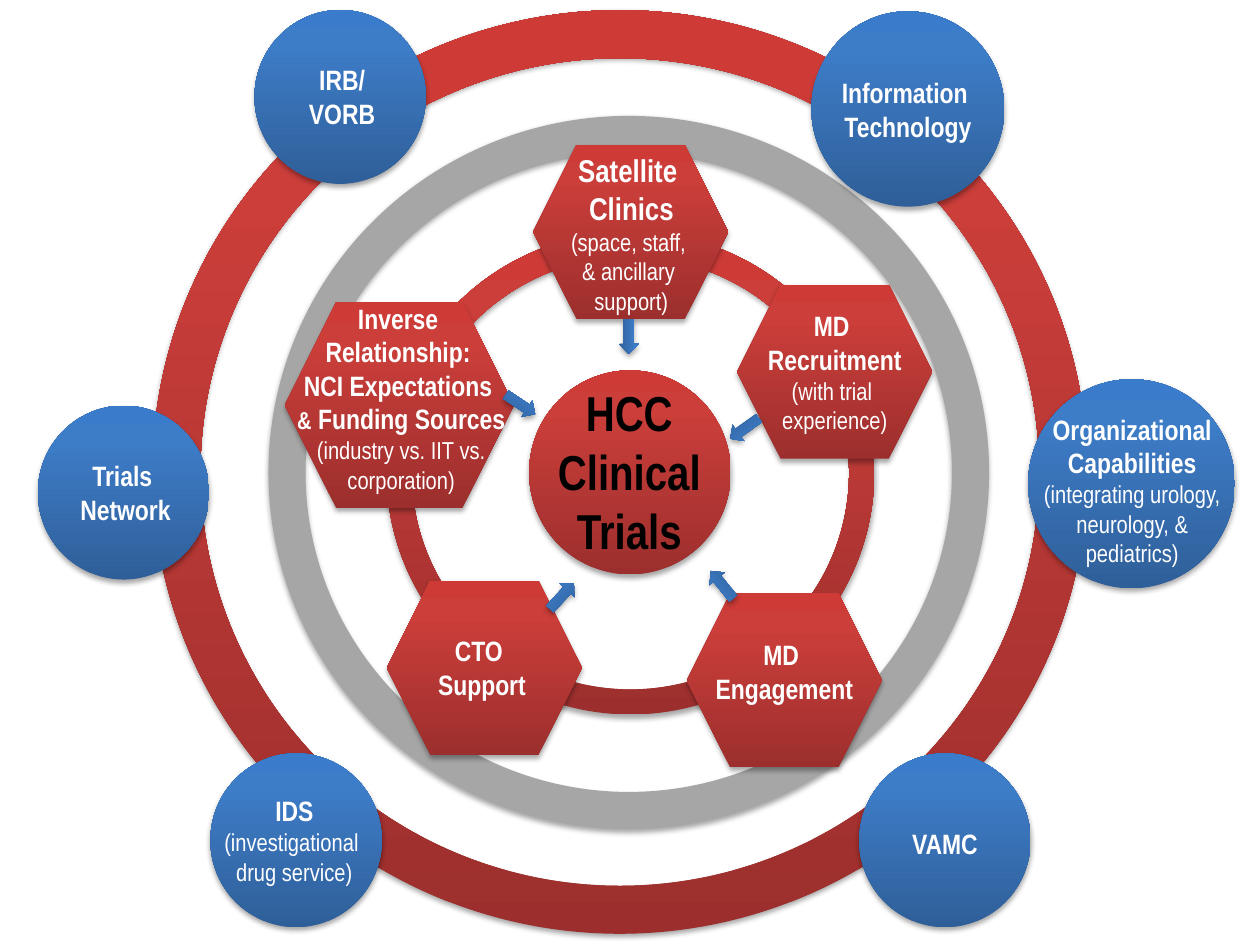
"""Build a slide of concentric rings around the HCC Clinical Trials hub."""
from copy import deepcopy

from pptx import Presentation
from pptx.dml.color import RGBColor
from pptx.enum.shapes import MSO_SHAPE
from pptx.enum.text import PP_ALIGN
from pptx.oxml import parse_xml
from pptx.oxml.ns import nsdecls, qn
from pptx.util import Pt

CIRCLE, HEXAGON = MSO_SHAPE.OVAL, MSO_SHAPE.HEXAGON
DONUT, ARROW = MSO_SHAPE.DONUT, MSO_SHAPE.RIGHT_ARROW
CENTER = PP_ALIGN.CENTER

WHITE = RGBColor(0xFF, 0xFF, 0xFF)
BLACK = RGBColor(0x00, 0x00, 0x00)
GRAY = RGBColor(0xA6, 0xA6, 0xA6)
RED = (RGBColor(0x9C, 0x2F, 0x2D), RGBColor(0xCB, 0x3E, 0x3A), RGBColor(0xCE, 0x3B, 0x37))
BLUE = (RGBColor(0x2F, 0x5F, 0x99), RGBColor(0x3D, 0x7C, 0xC7), RGBColor(0x3A, 0x7C, 0xCB))
STOPS = (0, 0.8, 1)

FONT = "Arial Narrow"
HUB, LARGE, HEAD, SMALL, NOTE = (28, True), (18, True), (16, True), (14, True), (14, False)

DISC = (97.9, 99.4)
HEX = (111.6, 99.4)
ARROW_SIZE = (20.2, 11.5)
RING_THICKNESS = 0.052
SHADOW = (
    f'<a:outerShdw {nsdecls("a")} blurRad="{Pt(3.1)}" dist="{Pt(1.8)}" dir="5400000"'
    ' rotWithShape="0"><a:srgbClr val="000000"><a:alpha val="35000"/></a:srgbClr></a:outerShdw>'
)

RINGS = [
    ((354.2, 269.7), (534.2, 527.8), RED),
    ((359.3, 270), (411.8, 407.5), GRAY),
    ((360.3, 270.4), (278.6, 275.8), RED),
]

NODES = [
    (CIRCLE, BLUE, (194.4, 55.4), DISC, (131.8, 46), (1.1, 0),
     [[("IRB/", HEAD)], [("VORB", HEAD)]]),
    (CIRCLE, BLUE, (646.6, 276.5), (118.1, 119.5), (130.3, 97.2), (0.4, 4),
     [[("Organizational Capabilities", HEAD)],
      [("(integrating urology, neurology, & pediatrics)", NOTE)]]),
    (HEXAGON, RED, (448.2, 388.8), HEX, (162, 46), (0, -5),
     [[("MD \nEngagement", HEAD)]]),
    (HEXAGON, RED, (228.2, 231.5), (131, 117.4), (153.4, 118.8), (1.1, -3.6),
     [[("Inverse ", HEAD)], [("Relationship: ", HEAD)],
      [("NCI Expectations \n", HEAD), ("&", SMALL), (" Funding Sources", HEAD)],
      [("(industry vs. IIT vs. corporation)", NOTE)]]),
    (CIRCLE, BLUE, (540, 480.2), DISC, (131.8, 26.6), (0, 1.8),
     [[("VAMC", HEAD)]]),
    (HEXAGON, RED, (477, 212.4), HEX, (162, 79.9), (0, 0.4),
     [[("MD \nRecruitment", HEAD)], [("(with trial ", NOTE)], [("experience)", NOTE)]]),
    (CIRCLE, BLUE, (169.2, 480.2), DISC, (131.8, 60.5), (-1, 0),
     [[("IDS", HEAD)], [("(investigational ", NOTE)], [("drug service)", NOTE)]]),
    (HEXAGON, RED, (276.8, 381.6), HEX, (162, 46), (-1.4, 0),
     [[("CTO ", HEAD)], [("Support", HEAD)]]),
    (HEXAGON, RED, (360.4, 132.5), HEX, (110.9, 101.5), (0.4, 1.1),
     [[("Satellite ", LARGE)],
      [("Clinics\n", LARGE), ("(space, staff, \n& ancillary ", NOTE)],
      [("support)", NOTE)]]),
    (CIRCLE, BLUE, (70.6, 281.5), DISC, (131.8, 46), (1.1, 0),
     [[("Trials ", HEAD)], [("Network", HEAD)]]),
    (CIRCLE, RED, (360, 270), (115.2, 116.6), (131.8, 108.7), (-0.4, -0.4),
     [[("HCC\nClinical Trials", HUB)]]),
    (CIRCLE, BLUE, (518.8, 62.3), (110.2, 111.6), (162, 46), (0, 0.4),
     [[("Information ", HEAD)], [("Technology", HEAD)]]),
]

ARROWS = [
    ((297.4, 231.1), 33.7),
    ((412.6, 334.1), 230.8),
    ((321.1, 340.6), 312.6),
    ((425.5, 244.8), 144.4),
    ((359.3, 192.2), 90),
]


def frame(center, size):
    (x, y), (width, height) = center, size
    return Pt(x - width / 2), Pt(y - height / 2), Pt(width), Pt(height)


def paint(shape, color):
    if color == GRAY:
        shape.fill.solid()
        shape.fill.fore_color.rgb = color
        return
    shape.fill.gradient()
    shape.fill.gradient_angle = 90
    stop_list = next(shape.element.iter(qn("a:gsLst")))
    stop_list.append(deepcopy(stop_list[0]))
    for stop, position, shade in zip(shape.fill.gradient_stops, STOPS, color):
        stop.position = position
        stop.color.rgb = shade


def add_figure(page, kind, center, size, color):
    shape = page.shapes.add_shape(kind, *frame(center, size))
    paint(shape, color)
    shape.line.fill.background()
    shape.shadow.inherit = False
    shape.element.spPr.find(qn("a:effectLst")).append(parse_xml(SHADOW))
    return shape


def set_style(font, style):
    font.size, font.bold = Pt(style[0]), style[1]


def add_label(page, center, size, paragraphs):
    box = page.shapes.add_textbox(*frame(center, size))
    box.text_frame.word_wrap = True
    for index, spans in enumerate(paragraphs):
        para = box.text_frame.add_paragraph() if index else box.text_frame.paragraphs[0]
        para.alignment = CENTER
        base = spans[0][1]
        para.font.name = FONT
        para.font.color.rgb = BLACK if base == HUB else WHITE
        set_style(para.font, base)
        for text, style in spans:
            for number, line in enumerate(text.split("\n")):
                if number:
                    para.add_line_break()
                if line:
                    span = para.add_run()
                    span.text = line
                    if style != base:
                        set_style(span.font, style)


def main():
    deck = Presentation()
    deck.slide_width, deck.slide_height = Pt(720), Pt(540)
    page = deck.slides.add_slide(deck.slide_layouts[6])
    for center, size, color in RINGS:
        add_figure(page, DONUT, center, size, color).adjustments[0] = RING_THICKNESS
    for kind, color, center, size, label_size, shift, paragraphs in NODES:
        add_figure(page, kind, center, size, color)
        label_center = (center[0] + shift[0], center[1] + shift[1])
        add_label(page, label_center, label_size, paragraphs)
    for center, rotation in ARROWS:
        add_figure(page, ARROW, center, ARROW_SIZE, BLUE).rotation = rotation
    deck.save("out.pptx")


if __name__ == "__main__":
    main()
